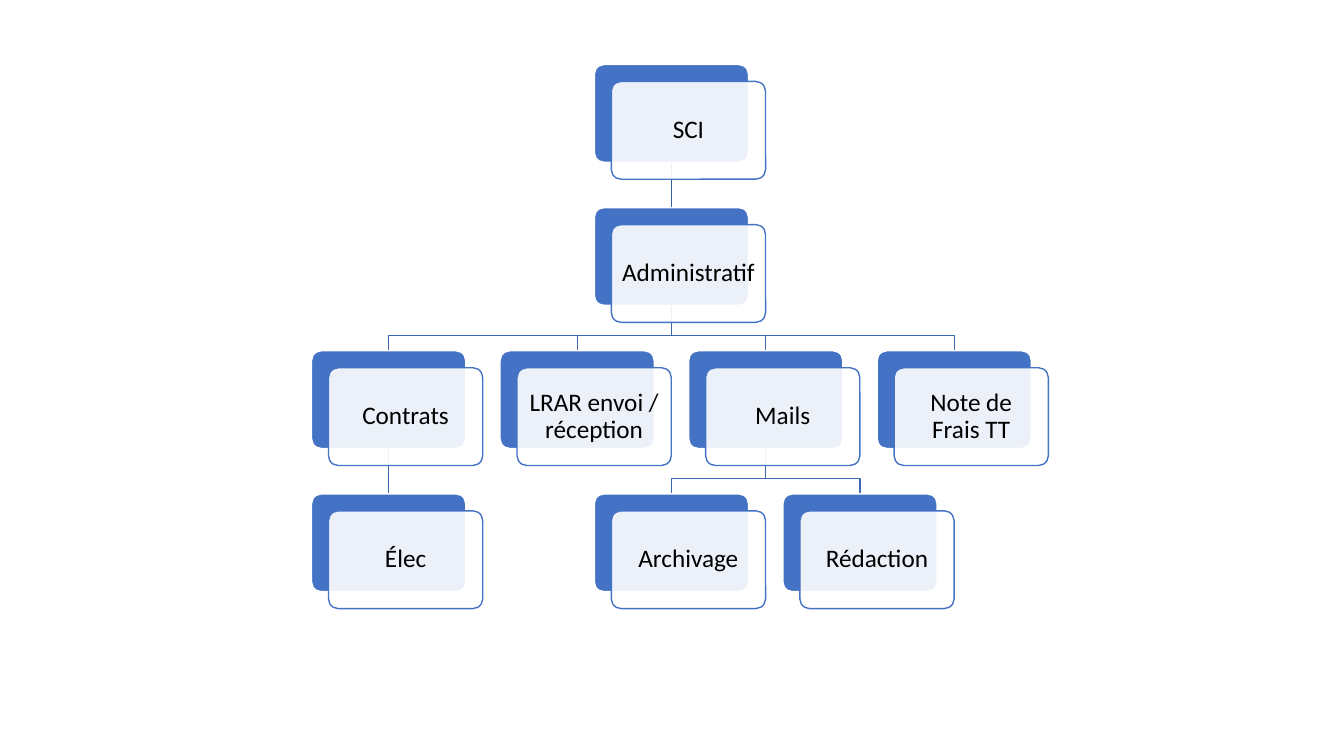
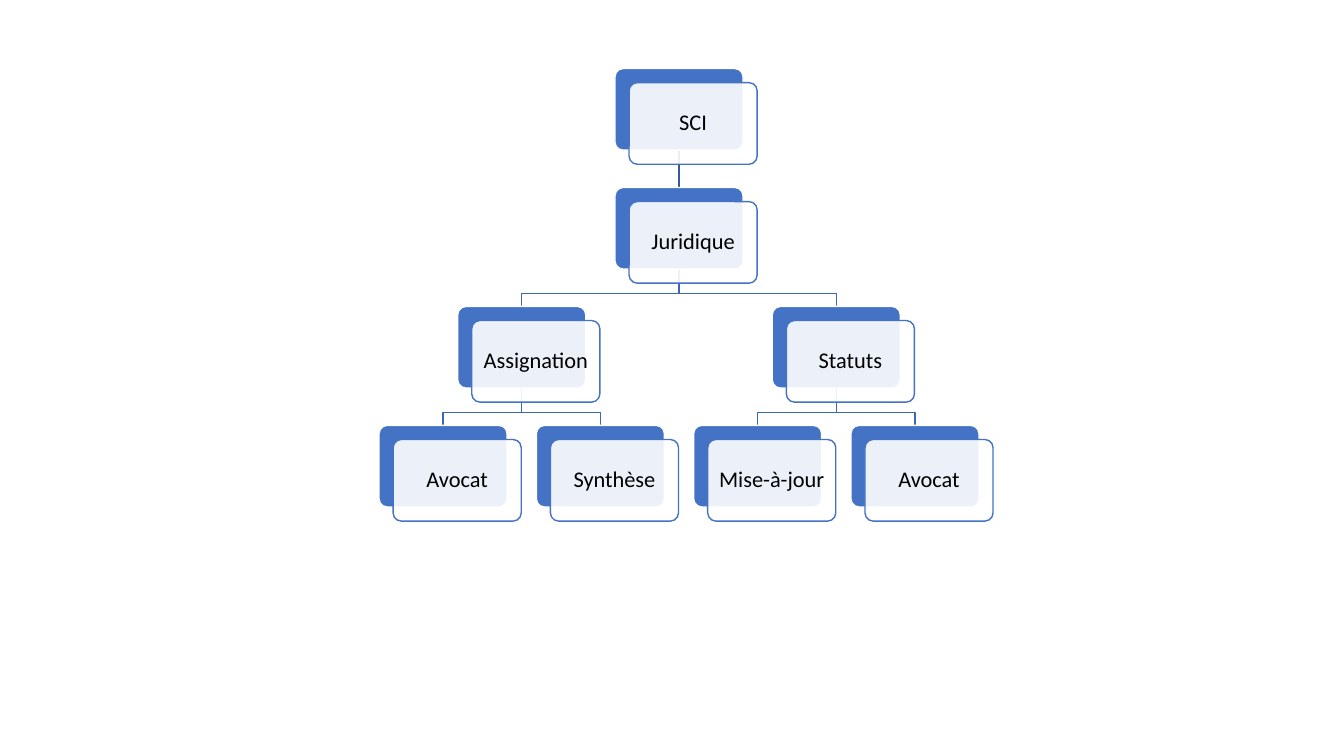
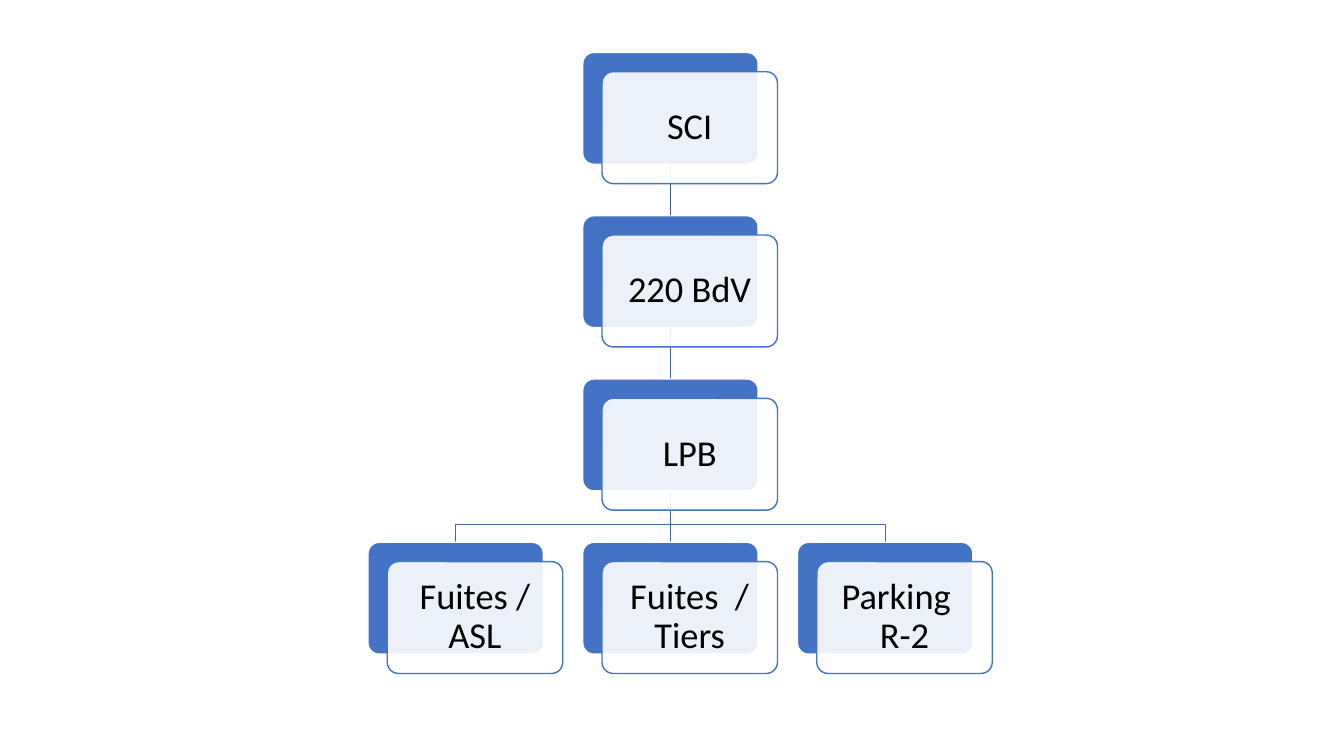
from dataclasses import dataclass
from typing import Iterator, Optional

from lxml import etree
from pptx import Presentation
from pptx import util as u
from pptx.dml import color
from pptx.enum import shapes, text
from pptx.oxml import ns

COLORS = {
    "card": "4472C4",
    "panel": "FFFFFF",
    "root_link": "365B9D",
    "link": "3E67B2",
    "text": "000000",
}
FONT = "Calibri"
CORNER = 0.1
LINE_WIDTH = u.Pt(1)
# Shares of the card width
SHIFT_X, SHIFT_Y, BUS_GAP = 0.11, 0.11, 0.1


@dataclass
class Node:
    label: str
    column: float
    children: tuple["Node", ...] = ()


@dataclass
class Chart:
    """An organisation chart on a grid; lengths are in inches."""
    root: Node
    left: float
    top: float
    column_step: float
    row_step: float
    width: float
    height: float
    font_size: int
    inset: float


@dataclass
class Place:
    node: Node
    row: int
    parent: Optional["Place"] = None


CHARTS = (
    Chart(
        Node("SCI", 1.5, (
            Node("Administratif", 1.5, (
                Node("Contrats", 0, (Node("Élec", 0),)),
                Node("LRAR envoi / réception", 1),
                Node("Mails", 2, (Node("Archivage", 1.5), Node("Rédaction", 2.5))),
                Node("Note de Frais TT", 3),
            )),
        )),
        left=3.09, top=0.64, column_step=1.87, row_step=1.42,
        width=1.53, height=0.97, font_size=18, inset=0.07),
    Chart(
        Node("SCI", 1.5, (
            Node("Juridique", 1.5, (
                Node("Assignation", 0.5, (Node("Avocat", 0), Node("Synthèse", 1))),
                Node("Statuts", 2.5, (Node("Mise-à-jour", 2), Node("Avocat", 3))),
            )),
        )),
        left=3.76, top=0.68, column_step=1.56, row_step=1.18,
        width=1.27, height=0.81, font_size=16, inset=0.07),
    Chart(
        Node("SCI", 1, (
            Node("220 BdV", 1, (
                Node("LPB", 1, (
                    Node("Fuites / ASL", 0),
                    Node("Fuites  / Tiers", 1),
                    Node("Parking   R-2", 2),
                )),
            )),
        )),
        left=3.65, top=0.52, column_step=2.13, row_step=1.62,
        width=1.74, height=1.11, font_size=26, inset=0.11),
)


def rgb(name: str) -> color.RGBColor:
    return color.RGBColor.from_string(COLORS[name])


def walk(node: Node, row: int = 0, parent: Optional[Place] = None) -> Iterator[Place]:
    """Yield each node with its row, parents first."""
    place = Place(node, row, parent)
    yield place
    for child in node.children:
        yield from walk(child, row + 1, place)


def corner_of(chart: Chart, place: Place) -> tuple[float, float]:
    return (chart.left + place.node.column * chart.column_step,
            chart.top + place.row * chart.row_step)


def write_text(shape, label: str, *, size: int, inset: float) -> None:
    frame = shape.text_frame
    frame.word_wrap = True
    frame.vertical_anchor = text.MSO_ANCHOR.MIDDLE
    frame.margin_left = frame.margin_right = u.Inches(inset)
    frame.margin_top = frame.margin_bottom = u.Inches(inset)
    paragraph = frame.paragraphs[0]
    paragraph.alignment = text.PP_ALIGN.CENTER
    paragraph.line_spacing = 0.9
    run = paragraph.add_run()
    run.text = label
    run.font.name = FONT
    run.font.size = u.Pt(size)
    run.font.color.rgb = rgb("text")


def add_box(slide, chart: Chart, left: float, top: float, *, fill: str, line: str):
    box = slide.shapes.add_shape(
        shapes.MSO_SHAPE.ROUNDED_RECTANGLE, u.Inches(left), u.Inches(top),
        u.Inches(chart.width), u.Inches(chart.height))
    box.adjustments[0] = CORNER
    box.shadow.inherit = False
    box.fill.solid()
    box.fill.fore_color.rgb = rgb(fill)
    box.line.color.rgb = rgb(line)
    box.line.width = LINE_WIDTH
    return box


def add_card(slide, chart: Chart, place: Place):
    """Draw the solid back and the translucent labelled front; return the back."""
    left, top = corner_of(chart, place)
    back = add_box(slide, chart, left, top, fill="card", line="panel")
    front = add_box(slide, chart, left + SHIFT_X * chart.width,
                    top + SHIFT_Y * chart.width, fill="panel", line="card")
    fill_color = front.fill._xPr.find(ns.qn("a:solidFill"))[0]
    etree.SubElement(fill_color, ns.qn("a:alpha"), val="90000")
    write_text(front, place.node.label, size=chart.font_size, inset=chart.inset)
    return back


def add_link(slide, chart: Chart, place: Place):
    """Draw the line from the parent: straight if aligned, else with two bends."""
    parent_left, parent_top = corner_of(chart, place.parent)
    left, top = corner_of(chart, place)
    half = chart.width / 2
    start_x, start_y = u.Inches(parent_left + half), u.Inches(parent_top + chart.height)
    end_x, end_y = u.Inches(left + half), u.Inches(top)
    if place.node.column == place.parent.node.column:
        link = slide.shapes.add_connector(
            shapes.MSO_CONNECTOR.STRAIGHT, start_x, start_y, end_x, end_y)
        etree.SubElement(link._element.spPr, ns.qn("a:effectLst"))
    else:
        bus_y = u.Inches(top - BUS_GAP * chart.width)
        builder = slide.shapes.build_freeform(start_x, start_y)
        builder.add_line_segments(
            [(start_x, bus_y), (end_x, bus_y), (end_x, end_y)], close=False)
        link = builder.convert_to_shape()
        link.fill.background()
        link.shadow.inherit = False
    link.line.color.rgb = rgb("root_link" if place.row == 1 else "link")
    link.line.width = LINE_WIDTH
    return link


def draw_chart(slide, chart: Chart) -> None:
    places = list(walk(chart.root))
    # Links lie behind the cards
    links = [add_link(slide, chart, place) for place in places[1:]]
    cards = {id(place): add_card(slide, chart, place) for place in places}
    # Join straight links to the cards, bottom to top
    for place, link in zip(places[1:], links):
        if place.node.column == place.parent.node.column:
            link.begin_connect(cards[id(place.parent)], 2)
            link.end_connect(cards[id(place)], 0)


def main() -> None:
    presentation = Presentation()
    presentation.slide_width = u.Inches(13.33)
    presentation.slide_height = u.Inches(7.5)
    blank_layout = presentation.slide_layouts[6]
    for chart in CHARTS:
        draw_chart(presentation.slides.add_slide(blank_layout), chart)
    presentation.save("out.pptx")


if __name__ == "__main__":
    main()
